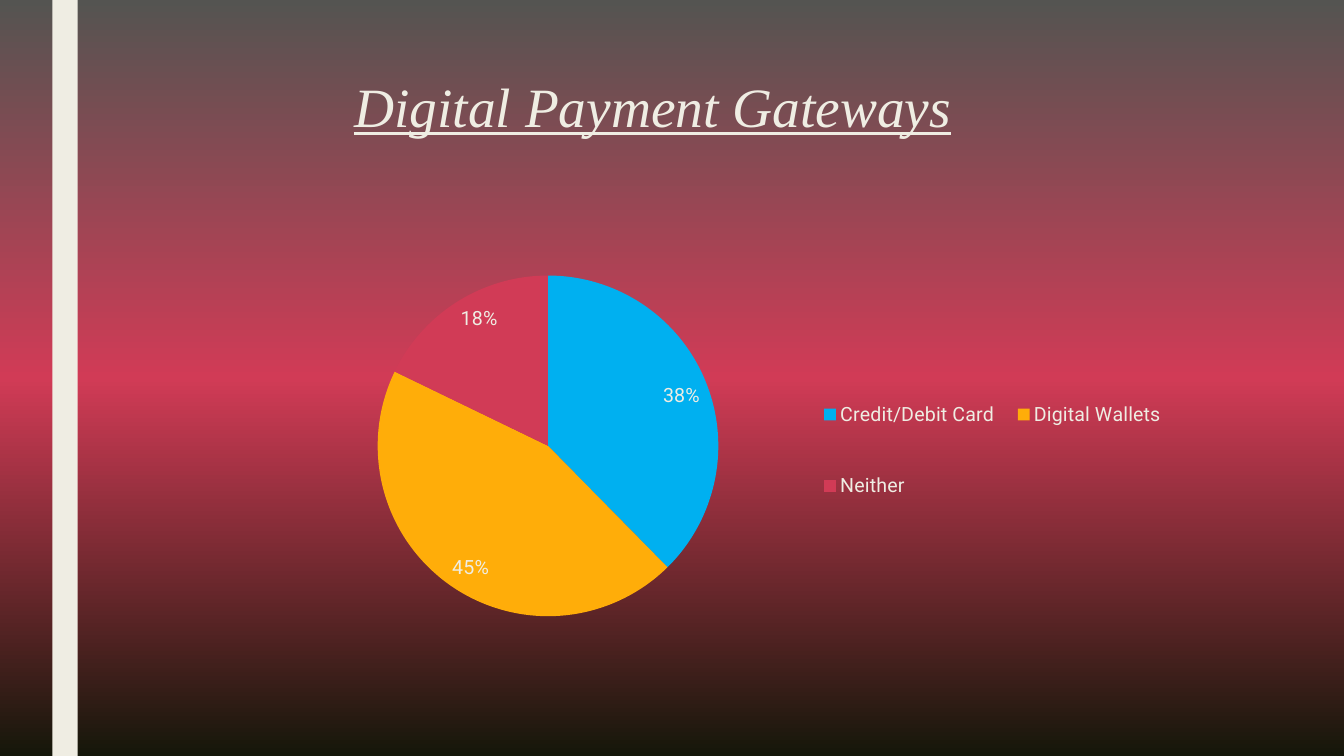
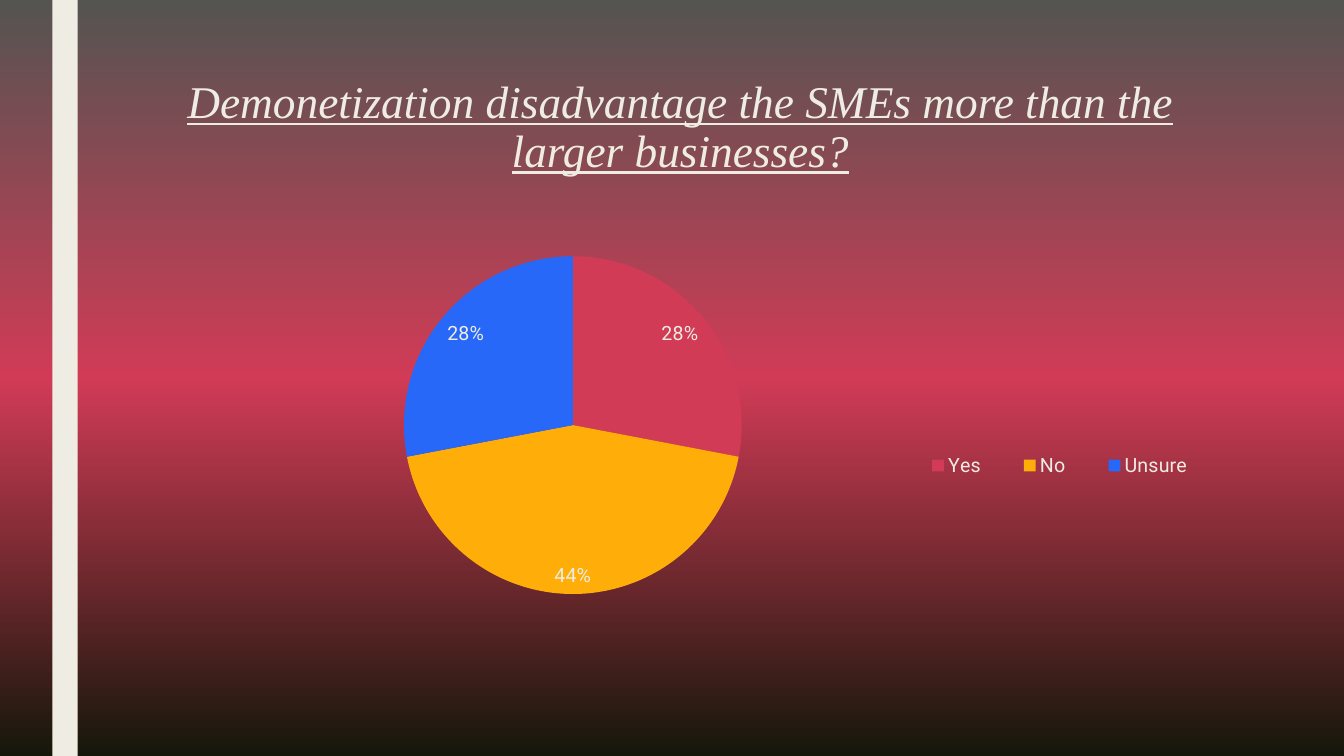
from copy import deepcopy

from lxml import etree
from pptx import Presentation
from pptx.chart import data
from pptx.dml import color
from pptx.enum import chart as kinds, shapes, text
from pptx.oxml import ns
from pptx.util import Cm, Pt

COLORS = {
    "gray": "545451",
    "red": "D13B56",
    "dark": "15170A",
    "cream": "EFEDE3",
    "cyan": "00B0F0",
    "amber": "FFAD09",
    "blue": "2768F9",
}
LABEL_FONT = {"name": "Roboto", "size": Pt(14)}
TITLE_FONT = {"name": "Times New Roman", "italic": True, "underline": True, "bold": False}
SURVEYS = [
    {
        "title": "Digital Payment Gateways",
        "title_size": 39.6,
        "title_area": (4.34, 1.89, 24.23, 2.5),
        "chart_area": (3.81, 5.16, 26.67, 11.15),
        "plot": (0, 0.16, 0.75, 0.77),
        "legend": (0.62, 0.34, 0.35, 0.43),
        "answers": [
            ("Credit/Debit Card", 38, "cyan"),
            ("Digital Wallets", 45, "amber"),
            ("Neither", 18, "red"),
        ],
    },
    {
        "title": "Demonetization disadvantage the SMEs more than the larger businesses?",
        "title_size": 32.4,
        "title_area": (3.81, 1.89, 26.67, 2.5),
        "chart_area": (4.17, 4.42, 26.67, 11.99),
        "plot": (0.02, 0.17, 0.73, 0.71),
        "legend": (0.69, 0.56, 0.32, 0.1),
        "answers": [("Yes", 28, "red"), ("No", 44, "amber"), ("Unsure", 28, "blue")],
    },
]


def rgb(name):
    return color.RGBColor.from_string(COLORS[name])


def apply(target, values):
    for name, value in values.items():
        setattr(target, name, value)


def style_font(font, values):
    apply(font, values)
    font.color.rgb = rgb("cream")


def keep_title_only(deck):
    title_only = deck.slide_layouts.get_by_name("Title Only")
    for layout in list(deck.slide_layouts):
        if layout is not title_only and layout.name != title_only.name:
            deck.slide_layouts.remove(layout)
    for base in (deck.slide_master, title_only):
        for holder in list(base.placeholders):
            if holder.placeholder_format.type != shapes.PP_PLACEHOLDER.TITLE:
                base.shapes.element.remove(holder.element)
    return title_only


def paint_background(master):
    fill = master.background.fill
    fill.gradient()
    fill.gradient_angle = 270
    stops = master.element.xpath(".//p:bg//a:gsLst")[0]
    stops.append(deepcopy(stops[-1]))
    for stop, name, position in zip(fill.gradient_stops, ("gray", "red", "dark"), (0, 0.5, 1)):
        stop.color.rgb = rgb(name)
        stop.position = position


def add_band(page, height):
    band = page.shapes.add_shape(shapes.MSO_SHAPE.RECTANGLE, Cm(1.32), 0, Cm(0.64), height)
    band.shadow.inherit = False
    band.fill.solid()
    band.fill.fore_color.rgb = rgb("cream")
    band.line.fill.background()


def set_title(page, survey):
    title = page.shapes.title
    apply(title, dict(zip(("left", "top", "width", "height"), map(Cm, survey["title_area"]))))
    frame = title.text_frame
    frame.text = survey["title"]
    apply(frame, {
        "word_wrap": True,
        "auto_size": text.MSO_AUTO_SIZE.NONE,
        "vertical_anchor": text.MSO_ANCHOR.TOP,
    })
    para = frame.paragraphs[0]
    apply(para, {"alignment": text.PP_ALIGN.CENTER, "line_spacing": 0.89})
    style_font(para.runs[0].font, {**TITLE_FONT, "size": Pt(survey["title_size"])})


def place_part(parent, index, area, inner=False):
    for old in parent.findall(ns.qn("c:layout")):
        parent.remove(old)
    layout = etree.Element(ns.qn("c:layout"))
    manual = etree.SubElement(layout, ns.qn("c:manualLayout"))
    settings = [("layoutTarget", "inner")] if inner else []
    settings += [("xMode", "edge"), ("yMode", "edge")]
    settings += zip("xywh", map(str, area))
    for tag, value in settings:
        etree.SubElement(manual, ns.qn(f"c:{tag}")).set("val", value)
    parent.insert(index, layout)


def add_pie(page, survey):
    names, values, colors = zip(*survey["answers"])
    numbers = data.CategoryChartData()
    numbers.categories = names
    numbers.add_series("Series 1", values)
    chart = page.shapes.add_chart(
        kinds.XL_CHART_TYPE.PIE, *map(Cm, survey["chart_area"]), numbers
    ).chart
    apply(chart, {"has_title": False, "has_legend": True})
    style_font(chart.font, LABEL_FONT)
    apply(chart.legend, {
        "position": kinds.XL_LEGEND_POSITION.RIGHT,
        "include_in_layout": False,
    })
    style_font(chart.legend.font, LABEL_FONT)
    plot = chart.plots[0]
    apply(plot, {"vary_by_categories": True, "has_data_labels": True})
    labels = plot.data_labels
    apply(labels, {
        "show_percentage": True,
        "show_value": False,
        "number_format": "0%",
        "number_format_is_linked": False,
        "position": kinds.XL_LABEL_POSITION.INSIDE_END,
    })
    style_font(labels.font, LABEL_FONT)
    for index, name in enumerate(colors):
        look = plot.series[0].points[index].format
        look.fill.solid()
        look.fill.fore_color.rgb = rgb(name)
        look.line.fill.background()
    place_part(chart.element.xpath(".//c:plotArea")[0], 0, survey["plot"], inner=True)
    place_part(chart.element.xpath(".//c:legend")[0], 1, survey["legend"])


def main():
    deck = Presentation()
    apply(deck, {"slide_width": Cm(33.87), "slide_height": Cm(19.05)})
    title_only = keep_title_only(deck)
    paint_background(deck.slide_master)
    for survey in SURVEYS:
        page = deck.slides.add_slide(title_only)
        add_band(page, deck.slide_height)
        set_title(page, survey)
        add_pie(page, survey)
    deck.save("out.pptx")


if __name__ == "__main__":
    main()
